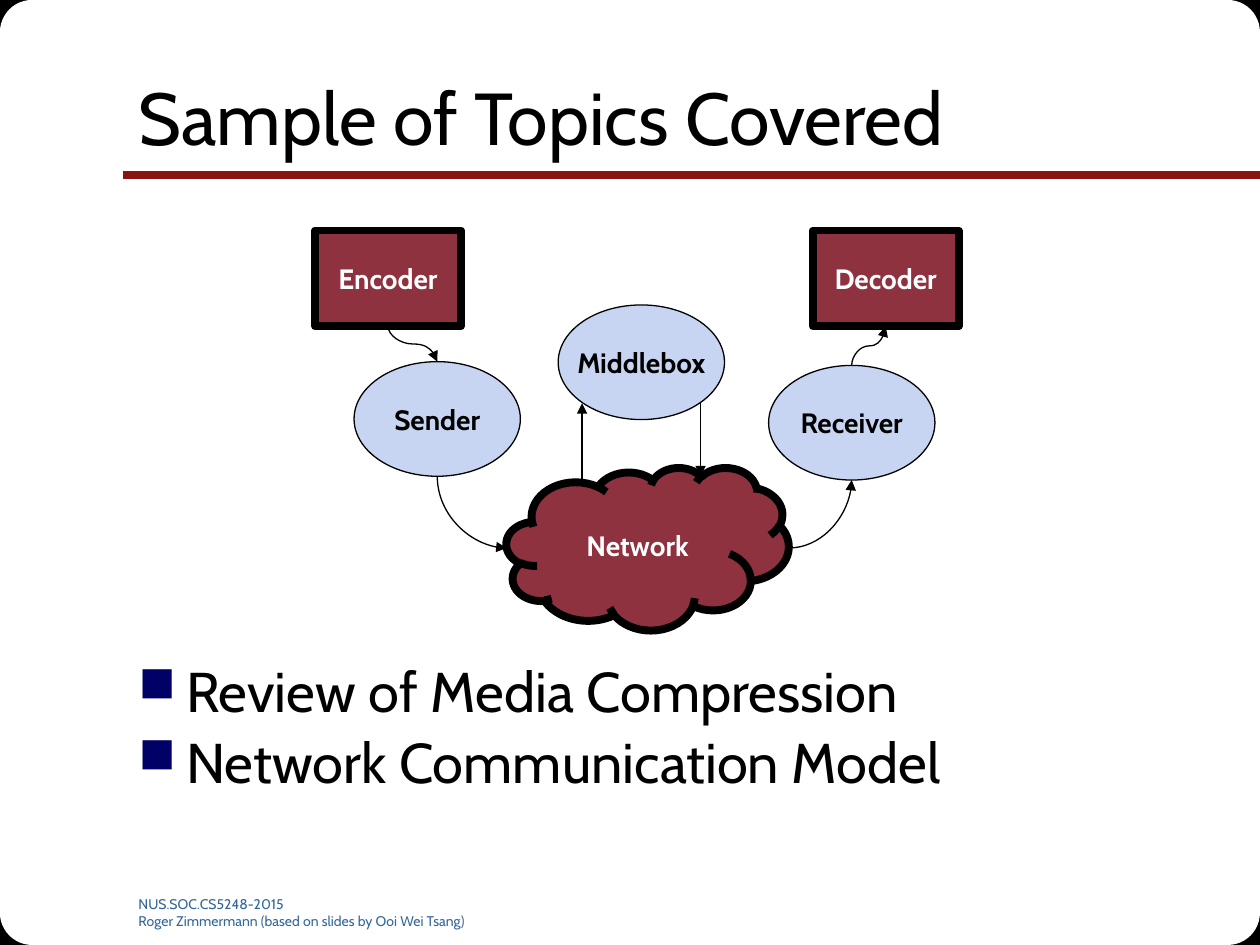
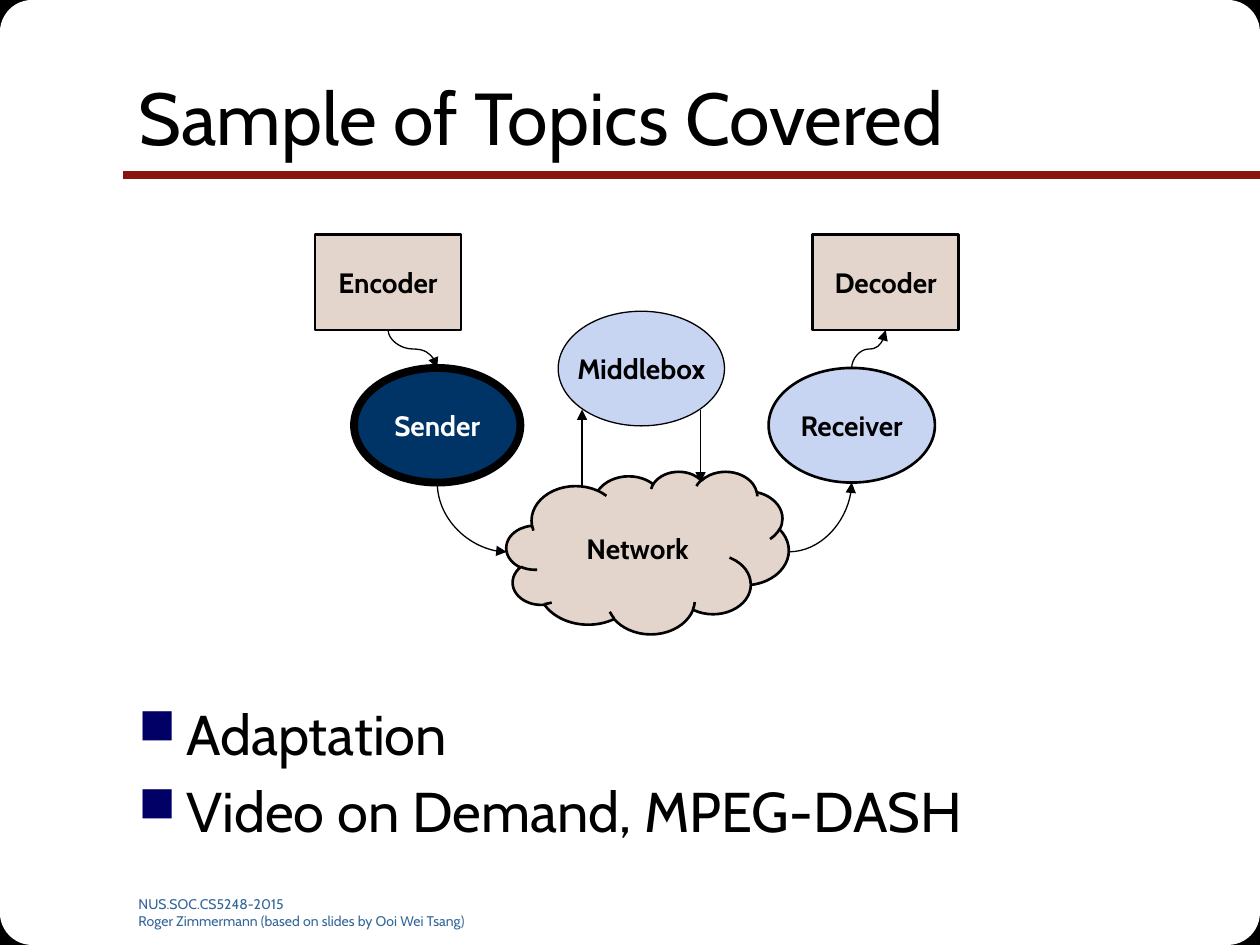
from dataclasses import dataclass
from itertools import product

from lxml.etree import SubElement
from pptx import Presentation
from pptx.dml.color import RGBColor
from pptx.enum.shapes import MSO_CONNECTOR as LINK, MSO_SHAPE as SHAPE
from pptx.enum.text import MSO_ANCHOR as ANCHOR, PP_ALIGN as ALIGN
from pptx.oxml.ns import qn
from pptx.util import Pt

PX = 9144  # EMU per px, 100 px to the inch
WIDTH, HEIGHT = 1000, 750


@dataclass(frozen=True)
class Theme:
    font: str = "Cabin"
    black: str = "000000"
    white: str = "FFFFFF"
    rule: str = "891411"
    footer: str = "336699"
    bullet: str = "000066"
    sand: str = "E3D4CC"
    wine: str = "8E3240"
    sky: str = "C7D5F2"
    navy: str = "003366"
    title_size: int = 42
    body_size: int = 32
    node_size: int = 16
    footer_size: int = 8
    thin: float = 0.75
    medium: float = 1.5
    thick: float = 4.5


@dataclass(frozen=True)
class Box:
    left: int
    top: int
    width: int
    height: int

    @property
    def right(self):
        return self.left + self.width

    @property
    def bottom(self):
        return self.top + self.height

    @property
    def center(self):
        return self.left + self.width // 2

    @property
    def middle(self):
        return self.top + self.height // 2

    def emu(self):
        return [v * PX for v in (self.left, self.top, self.width, self.height)]


THEME = Theme()
RECT, OVAL, CLOUD = SHAPE.RECTANGLE, SHAPE.OVAL, SHAPE.CLOUD

# Name: outline, left, width, height
NODES = {
    "Network": (CLOUD, 402, 224, 129),
    "Encoder": (RECT, 250, 116, 76),
    "Sender": (OVAL, 281, 132, 91),
    "Middlebox": (OVAL, 443, 132, 91),
    "Receiver": (OVAL, 610, 132, 91),
    "Decoder": (RECT, 645, 116, 76),
}
# Outline: plain fill, highlighted fill, plain line width
NODE_STYLES = {
    RECT: (THEME.sand, THEME.wine, THEME.medium),
    CLOUD: (THEME.sand, THEME.wine, THEME.medium),
    OVAL: (THEME.sky, THEME.navy, THEME.thin),
}
TITLE = "Sample of Topics Covered"
FOOTER = ["NUS.SOC.CS5248-2015",
          "Roger Zimmermann (based on slides by Ooi Wei Tsang)"]


def rgb(color):
    return RGBColor.from_string(color)


def write(frame, lines, *, size, color=THEME.black, bold=False, align=ALIGN.LEFT,
          anchor=ANCHOR.TOP, wrap=True, spacing=None, after=0, bullet=None):
    """Fill a text frame with one paragraph per line."""
    frame.word_wrap = wrap
    frame.vertical_anchor = anchor
    for number, line in enumerate(lines):
        para = frame.add_paragraph() if number else frame.paragraphs[0]
        para.alignment = align
        para.space_after = Pt(after)
        if spacing:
            para.line_spacing = spacing
        run = para.add_run()
        run.text = line
        font = run.font
        font.name, font.size, font.bold = THEME.font, Pt(size), bold
        font.color.rgb = rgb(color)
        if bullet:
            props = para._p.get_or_add_pPr()
            props.set("marL", str(38 * PX))
            props.set("indent", str(-38 * PX))
            SubElement(SubElement(props, qn("a:buClr")), qn("a:srgbClr"), val=bullet)
            SubElement(props, qn("a:buSzPct"), val="90000")
            SubElement(props, qn("a:buChar"), char="■")


class Deck:
    def __init__(self, theme):
        self.theme = theme
        self.prs = Presentation()
        self.prs.slide_width, self.prs.slide_height = WIDTH * PX, HEIGHT * PX
        self.slide = None

    def new_slide(self, title):
        self.slide = self.prs.slides.add_slide(self.prs.slide_layouts[5])
        self.frame()
        heading = self.slide.shapes.title
        heading.left, heading.top, heading.width, heading.height = Box(100, 30, 850, 125).emu()
        self.slide.shapes._spTree.append(heading._element)  # above the corners
        write(heading.text_frame, [title], size=self.theme.title_size, anchor=ANCHOR.MIDDLE)

    def frame(self):
        """Rounded black corners, title rule and footer."""
        t = self.theme
        for outline, width, height, fill, line in (
                (RECT, 43, 44, t.black, t.thin),
                (SHAPE.ROUNDED_RECTANGLE, 153, 153, t.white, None)):
            for left, top in product((0, WIDTH - width), (0, HEIGHT - height)):
                self.shape(outline, Box(left, top, width, height), fill, line)
        self.line((WIDTH, 139), (98, 139), color=t.rule, weight=t.thick)
        self.text(Box(100, 706, 308, 28), FOOTER, size=t.footer_size, color=t.footer)

    def shape(self, outline, box, fill, weight=None):
        shape = self.slide.shapes.add_shape(outline, *box.emu())
        shape.shadow.inherit = False
        shape.fill.solid()
        shape.fill.fore_color.rgb = rgb(fill)
        if weight:
            shape.line.color.rgb = rgb(self.theme.black)
            shape.line.width = Pt(weight)
        else:
            shape.line.fill.background()
        return shape

    def text(self, box, lines, **style):
        write(self.slide.shapes.add_textbox(*box.emu()).text_frame, lines, **style)

    def node(self, name, box, outline, highlighted, weight=None):
        plain, strong, usual = NODE_STYLES[outline]
        shape = self.shape(outline, box, strong if highlighted else plain,
                           self.theme.thick if highlighted else weight or usual)
        write(shape.text_frame, [name], size=self.theme.node_size, bold=True,
              color=self.theme.white if highlighted else self.theme.black,
              align=ALIGN.CENTER, anchor=ANCHOR.MIDDLE, wrap=False)

    def line(self, start, end, kind=LINK.STRAIGHT, color=None, weight=None, arrow=False):
        link = self.slide.shapes.add_connector(kind, *(v * PX for v in (*start, *end)))
        link.line.color.rgb = rgb(color or self.theme.black)
        link.line.width = Pt(weight or self.theme.thin)
        if arrow:
            SubElement(link.line._get_or_add_ln(), qn("a:tailEnd"), type="triangle")
        SubElement(link._element.spPr, qn("a:effectLst"))
        return link

    def curve(self, start, end, bends=2, upright=True):
        """Curved arrow running rightwards; an upright one leaves vertically."""
        link = self.line(start, end, LINK.CURVE, arrow=True)
        props = link._element.spPr
        props.find(qn("a:prstGeom")).set("prst", f"curvedConnector{bends + 1}")
        if upright:
            (x1, y1), (x2, y2) = start, end
            across, down = abs(x2 - x1) * PX, abs(y2 - y1) * PX
            link.left = (x1 + x2) * PX // 2 - down // 2
            link.top = (y1 + y2) * PX // 2 - across // 2
            link.width, link.height = down, across
            place = props.find(qn("a:xfrm"))
            place.attrib.pop("flipV", None)
            place.set("rot", str(270 * 60000))
            if y2 > y1:
                place.set("flipH", "1")

    def pipeline(self, tops, highlights, weights):
        """Path of the media from encoder to decoder."""
        boxes = {}
        for name, (outline, left, width, height) in NODES.items():
            boxes[name] = Box(left, tops[name], width, height)
            self.node(name, boxes[name], outline, name in highlights, weights.get(name))
        encoder, sender, network, middlebox, receiver, decoder = (
            boxes[name] for name in
            ("Encoder", "Sender", "Network", "Middlebox", "Receiver", "Decoder"))

        self.curve((encoder.center, encoder.bottom), (sender.center, sender.top))
        self.curve((sender.center, sender.bottom), (network.left, network.middle), bends=1)
        self.curve((network.right, network.middle), (receiver.center, receiver.bottom),
                   bends=1, upright=False)
        self.curve((receiver.center, receiver.top), (decoder.center, decoder.bottom))

        # Arrows meet the middlebox at its lower diagonals
        inset, rim = 19, middlebox.top + 78
        up, down = middlebox.left + inset, middlebox.right - inset
        self.line((up, rim + 62), (up, rim), arrow=True)
        self.line((down, rim), (down, rim + 58), arrow=True)

    def topics(self, top, lines, spacing=None):
        self.text(Box(100, top, 850, 120), lines, size=self.theme.body_size,
                  spacing=spacing, after=6, bullet=self.theme.bullet)


def main():
    deck = Deck(THEME)

    # Compression and network model
    deck.new_slide(TITLE)
    deck.pipeline({"Network": 371, "Encoder": 183, "Sender": 287, "Middlebox": 242,
                   "Receiver": 290, "Decoder": 183},
                  highlights={"Encoder", "Decoder", "Network"}, weights={})
    deck.topics(522, ["Review of Media Compression", "Network Communication Model"],
                spacing=0.9)

    # Sender side
    deck.new_slide(TITLE)
    deck.pipeline({"Network": 374, "Encoder": 186, "Sender": 292, "Middlebox": 247,
                   "Receiver": 292, "Decoder": 186},
                  highlights={"Sender"}, weights={"Receiver": THEME.medium})
    deck.topics(550, ["Adaptation", "Video on Demand, MPEG-DASH"])

    deck.prs.save("out.pptx")


if __name__ == "__main__":
    main()
